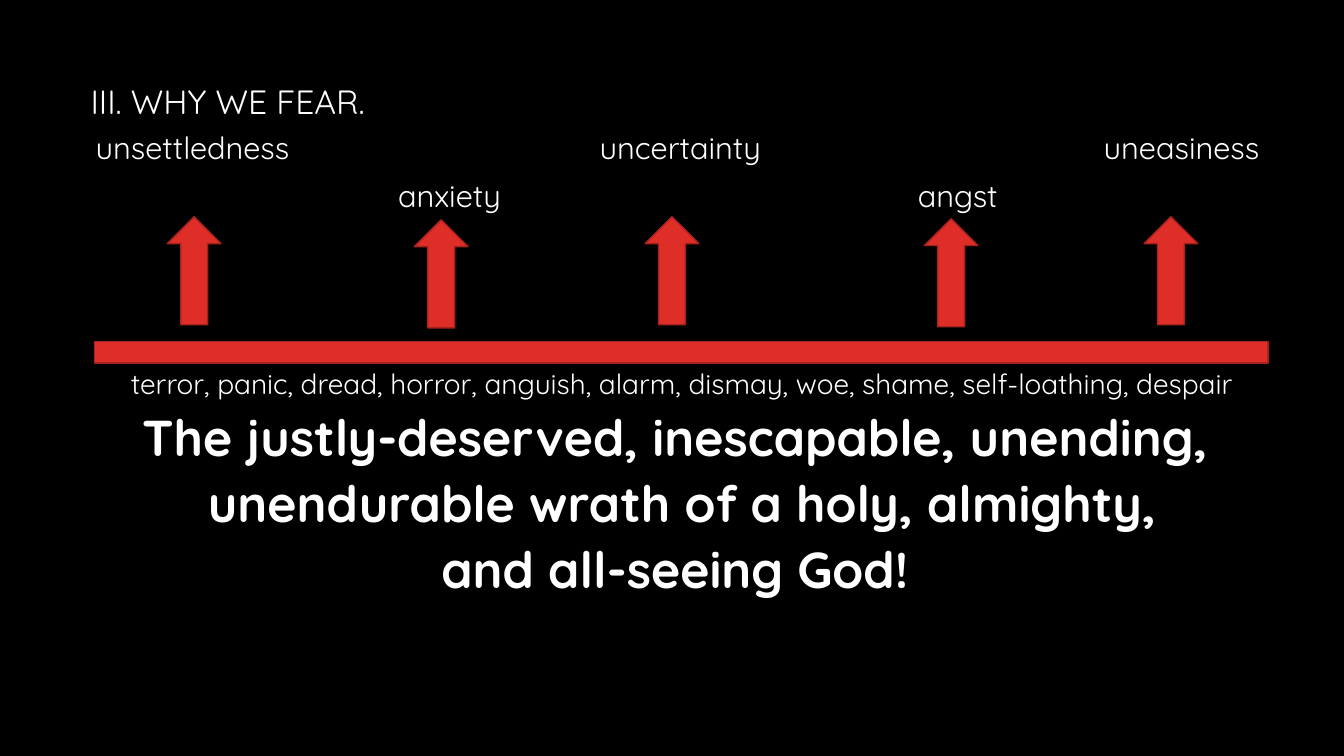
"""Builds the 'Why we fear' slide: five fears rising from one bar of dread."""
from pptx import Presentation
from pptx.dml.color import RGBColor
from pptx.enum.shapes import MSO_SHAPE
from pptx.enum.text import MSO_ANCHOR, PP_ALIGN
from pptx.util import Pt

HEADING = "III. WHY WE FEAR."
FEARS = [
    {"word": "unsettledness", "left": 68.4, "row": 0, "arrow": (119.5, 154.8)},
    {"word": "anxiety", "left": 284.4, "row": 1, "arrow": (295.9, 157)},
    {"word": "uncertainty", "left": 428.4, "row": 0, "arrow": (460.8, 154.8)},
    {"word": "angst", "left": 655.6, "row": 1, "arrow": (660.2, 156.2)},
    {"word": "uneasiness", "left": 788.4, "row": 0, "arrow": (817.2, 154.8)},
]
DREAD = "terror, panic, dread, horror, anguish, alarm, dismay, woe, shame, self-loathing, despair"
VERDICT = [
    "The justly-deserved, inescapable, unending, ",
    "unendurable wrath of a holy, almighty,",
    "and all-seeing God! ",
]
COLORS = {"background": "000000", "text": "FFFFFF", "red": "DF2E28", "edge": "A5221E"}
FONT = "Quicksand"
FEAR_TOP, ROW_STEP = 95.2, 34.3
ARROW_WIDTH, ARROW_HEIGHT = 38.4, 77.2


def color(name):
    return RGBColor.from_string(COLORS[name])


def add_text(page, lines, left, top, width, height, inset=0, align=PP_ALIGN.LEFT,
             anchor=MSO_ANCHOR.TOP):
    box = page.shapes.add_textbox(Pt(left), Pt(top), Pt(width), Pt(height))
    frame = box.text_frame
    frame.word_wrap = True
    frame.vertical_anchor = anchor
    frame.margin_left = frame.margin_right = Pt(inset)
    frame.margin_top = frame.margin_bottom = Pt(inset / 2)
    for index, (text, size, bold) in enumerate(lines):
        para = frame.paragraphs[0] if index == 0 else frame.add_paragraph()
        para.text = text
        para.alignment = align
        para.line_spacing = 0.9
        if index:
            para.space_before = Pt(8.5)
        para.font.name = FONT
        para.font.size = Pt(size)
        para.font.bold = bold
        para.font.color.rgb = color("text")


def add_red_shape(page, kind, left, top, width, height):
    shape = page.shapes.add_shape(kind, Pt(left), Pt(top), Pt(width), Pt(height))
    shape.shadow.inherit = False
    shape.fill.solid()
    shape.fill.fore_color.rgb = color("red")
    shape.line.color.rgb = color("edge")
    shape.line.width = Pt(1)


def main():
    deck = Presentation()
    deck.slide_width, deck.slide_height = Pt(960), Pt(540)
    page = deck.slides.add_slide(deck.slide_layouts[6])
    page.background.fill.solid()
    page.background.fill.fore_color.rgb = color("background")

    add_text(page, [(HEADING, 24, False)], 57.6, 55.4, 678, 37.4, 7.2,
             anchor=MSO_ANCHOR.MIDDLE)
    for fear in FEARS:
        add_text(page, [(fear["word"], 22, False)], fear["left"],
                 FEAR_TOP + fear["row"] * ROW_STEP, 150, 28)
        add_red_shape(page, MSO_SHAPE.UP_ARROW, *fear["arrow"], ARROW_WIDTH, ARROW_HEIGHT)
    add_red_shape(page, MSO_SHAPE.RECTANGLE, 67.7, 244.1, 838.1, 15.1)
    closing = [(DREAD, 20, False)] + [(line, 36, True) for line in VERDICT]
    add_text(page, closing, 61.2, 261, 851.8, 190, 7.2, PP_ALIGN.CENTER)
    deck.save("out.pptx")


if __name__ == "__main__":
    main()
